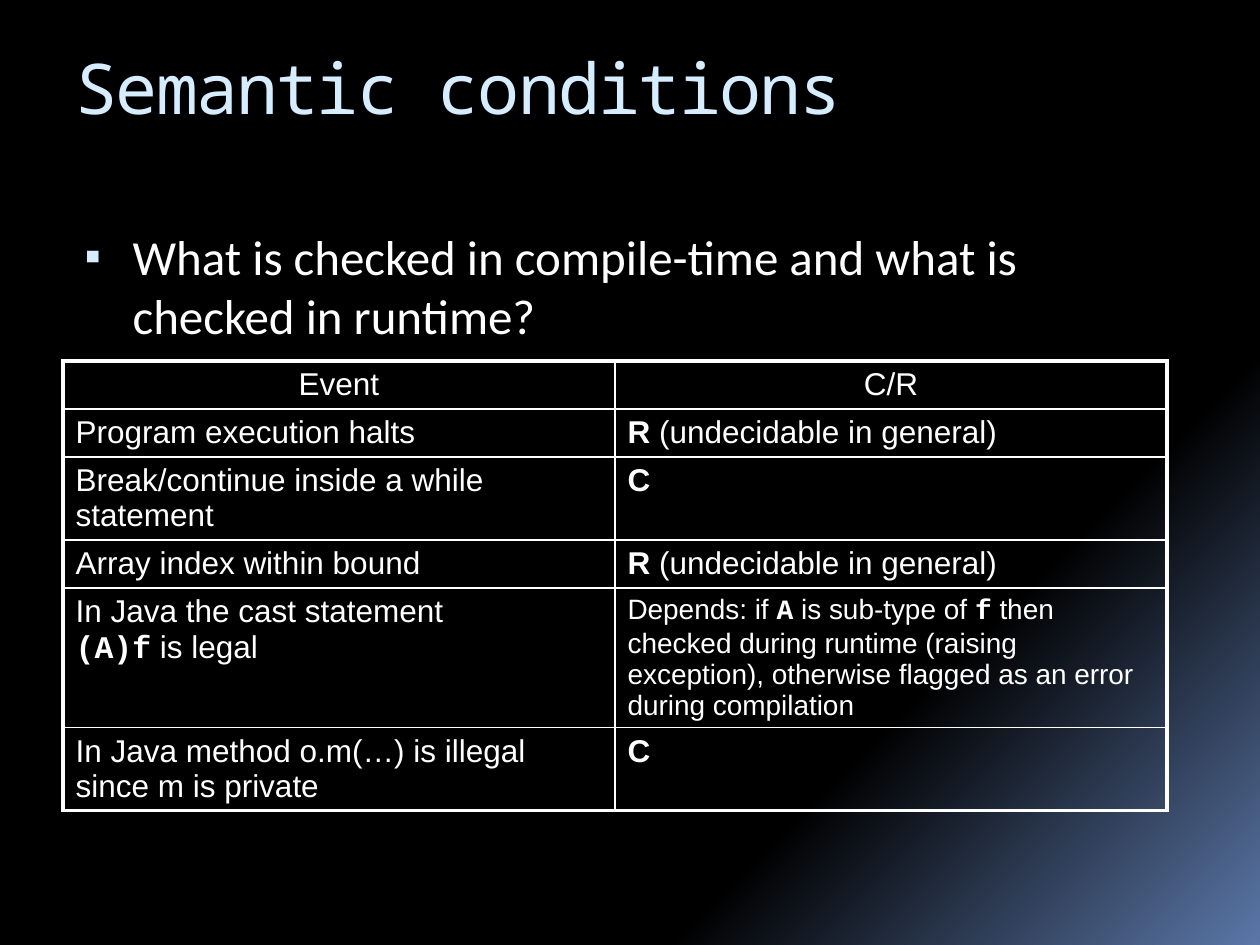
from lxml.etree import SubElement
from pptx import Presentation
from pptx.dml.color import RGBColor
from pptx.enum.text import MSO_ANCHOR, MSO_AUTO_SIZE, PP_ALIGN
from pptx.oxml.ns import qn
from pptx.util import Emu, Pt

PIXEL = 914400 / 126
BLACK = RGBColor(0x00, 0x00, 0x00)
WHITE = RGBColor(0xFF, 0xFF, 0xFF)
ICE = RGBColor(0xD6, 0xEC, 0xFF)
STEEL = RGBColor(0x5B, 0x77, 0xA8)
CODE = "Courier New"
THICK, THIN = 2.25, 1

EVENTS = [
    ([("Event", "")], [("C/R", "")]),
    ([("Program execution halts", "")],
     [("R", "b"), (" (undecidable in general)", "")]),
    ([("Break/continue inside a while statement", "")], [("C", "b")]),
    ([("Array index within bound", "")],
     [("R", "b"), (" (undecidable in general)", "")]),
    ([("In Java the cast statement", ""), ("\n", ""), ("(A)f", "code"), (" is legal", "")],
     [("Depends: if ", ""), ("A", "code"), (" is sub-type of ", ""), ("f", "code"),
      (" then checked during runtime (raising exception), "
       "otherwise flagged as an error during compilation", "")]),
    ([("In Java method o.m(…) is illegal since m is private", "")], [("C", "b")]),
]
CAST_ROW = 4


def px(length):
    return Emu(round(length * PIXEL))


def add_run(para, text, font, size, color, bold=False):
    span = para.add_run()
    span.text = text
    span.font.name = font
    span.font.size = Pt(size)
    span.font.bold = bold
    span.font.color.rgb = color
    return span


def paint_background(page):
    fill = page.background.fill
    fill.gradient()
    fill.gradient_angle = 315
    for stop, position, color in zip(fill.gradient_stops, (0.73, 1), (BLACK, STEEL)):
        stop.position = position
        stop.color.rgb = color


def place_text(holder, box):
    holder.left, holder.top, holder.width, holder.height = map(px, box)
    frame = holder.text_frame
    frame.word_wrap = True
    frame.auto_size = MSO_AUTO_SIZE.NONE
    frame.vertical_anchor = MSO_ANCHOR.TOP
    para = frame.paragraphs[0]
    para.alignment = PP_ALIGN.LEFT
    return para


def fill_title(holder, box):
    para = place_text(holder, box)
    span = add_run(para, "Semantic conditions", "Noto Sans Mono", 40, ICE)
    span.font._element.set("spc", "-100")


def fill_question(holder, box):
    para = place_text(holder, box)
    para.space_before = Pt(7)
    properties = para._p.get_or_add_pPr()
    properties.set("marL", str(px(57)))
    properties.set("indent", str(px(-48)))
    bullet_color = SubElement(properties, qn("a:buClr"))
    SubElement(bullet_color, qn("a:srgbClr"), val=str(ICE))
    SubElement(properties, qn("a:buSzPct"), val="95000")
    SubElement(properties, qn("a:buChar"), char="▪")
    add_run(para, "What is checked in compile-time and what is checked in runtime?",
            "Calibri", 28, WHITE)


def draw_borders(cell, widths):
    properties = cell._tc.get_or_add_tcPr()
    for side, width in zip("LRTB", widths):
        line = SubElement(properties, qn(f"a:ln{side}"), w=str(Pt(width)))
        fill = SubElement(line, qn("a:solidFill"))
        SubElement(fill, qn("a:srgbClr"), val=str(WHITE))


def fill_cell(cell, spans, size, alignment):
    para = cell.text_frame.paragraphs[0]
    para.alignment = alignment
    before = SubElement(para._p.get_or_add_pPr(), qn("a:spcBef"))
    SubElement(before, qn("a:spcPct"), val="20000")
    for text, style in spans:
        if text == "\n":
            para.add_line_break()
        else:
            font = CODE if style == "code" else "Arial"
            add_run(para, text, font, size, WHITE, bold=style != "")


def add_event_table(page, box):
    left, top, width, row_height = box
    last_row, last_column = len(EVENTS) - 1, 1
    frame = page.shapes.add_table(len(EVENTS), 2, px(left), px(top), px(width),
                                  px(row_height * len(EVENTS)))
    table = frame.table
    table.first_row = False
    table.horz_banding = False
    for row, cells in enumerate(EVENTS):
        for column, spans in enumerate(cells):
            cell = table.cell(row, column)
            outer = (column == 0, column == last_column, row == 0, row == last_row)
            draw_borders(cell, [THICK if edge else THIN for edge in outer])
            cell.fill.background()
            size = 16 if (row, column) == (CAST_ROW, last_column) else 18
            fill_cell(cell, spans, size, PP_ALIGN.CENTER if row == 0 else PP_ALIGN.LEFT)


def main():
    deck = Presentation()
    deck.slide_width, deck.slide_height = px(1260), px(945)
    page = deck.slides.add_slide(deck.slide_layouts[1])
    paint_background(page)
    fill_title(page.shapes.title, (63, 38, 1134, 157))
    fill_question(page.placeholders[1], (63, 220, 1129, 152))
    add_event_table(page, (63, 361, 1104, 46))
    deck.save("out.pptx")


if __name__ == "__main__":
    main()
